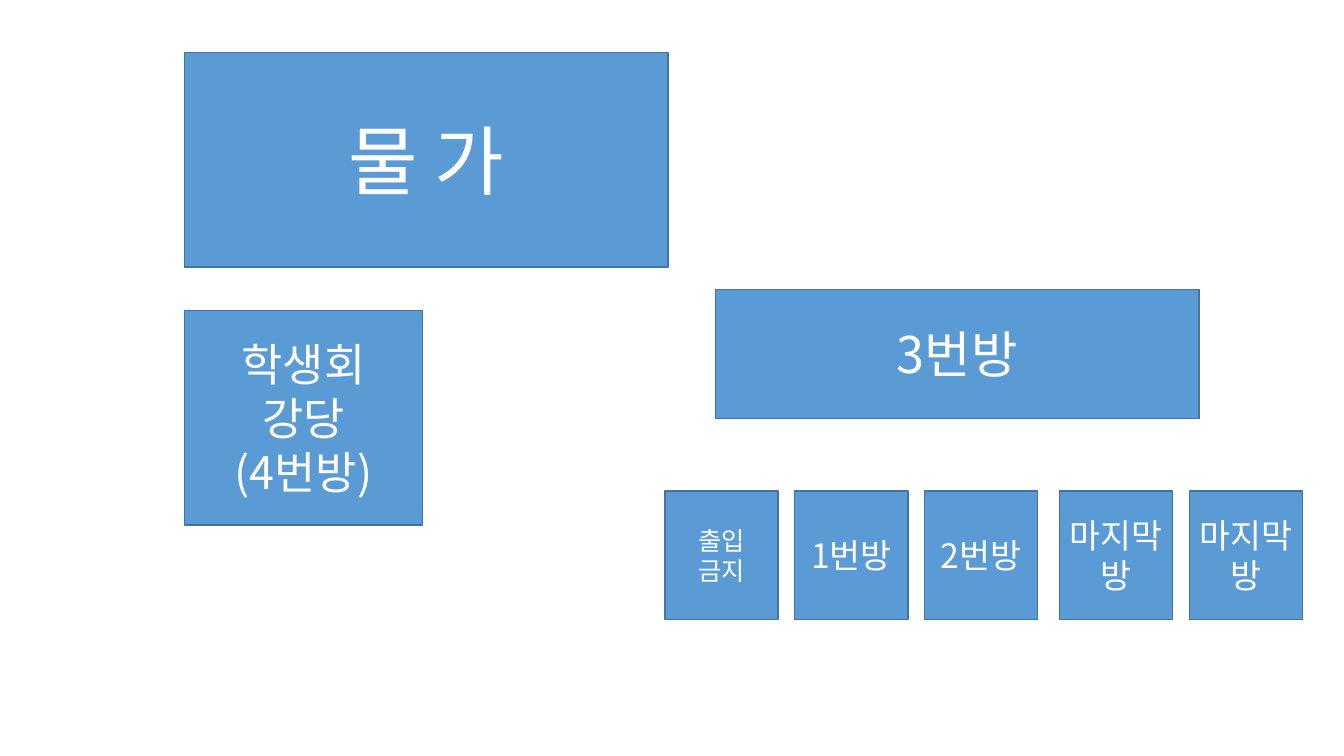
from lxml.etree import SubElement
from pptx import Presentation
from pptx.dml.color import RGBColor as RGB
from pptx.enum.shapes import MSO_SHAPE as Shape
from pptx.enum.text import MSO_ANCHOR as Anchor, PP_ALIGN as Align
from pptx.oxml.ns import qn
from pptx.util import Cm, Pt

COLORS = {"room": "5B9BD5", "edge": "43739E", "text": "FFFFFF"}
FONT = "Noto Sans CJK KR"


def add_room(slide, box, label, size):
    """Draw one labelled room in a box of left, top, width and height in cm."""
    room = slide.shapes.add_shape(Shape.RECTANGLE, *map(Cm, box))
    room.shadow.inherit = False
    room.fill.solid()
    room.fill.fore_color.rgb = RGB.from_string(COLORS["room"])
    room.line.color.rgb = RGB.from_string(COLORS["edge"])
    room.line.width = Pt(1)
    frame = room.text_frame
    frame.word_wrap = True
    frame.vertical_anchor = Anchor.MIDDLE
    frame.text = label
    for para in frame.paragraphs:
        para.alignment = Align.CENTER
        for run in para.runs:
            run.font.size = Pt(size)
            run.font.name = FONT
            run.font.color.rgb = RGB.from_string(COLORS["text"])
            SubElement(run.font._element, qn("a:ea"), typeface=FONT)


def add_row(slide, box, gap, rooms):
    """Fill a box with equal rooms from left to right, a gap apart."""
    left, top, width, height = box
    each = (width - gap * (len(rooms) - 1)) / len(rooms)
    for i, (label, size) in enumerate(rooms):
        add_room(slide, (left + i * (each + gap), top, each, height), label, size)


def add_west(slide, box):
    """Place the waterside above the student hall."""
    left, top, width, height = box
    tall = 5.41
    add_room(slide, (left, top, width, tall), "물 가", 54)
    add_room(slide, (left, top + height - tall, 6, tall), "학생회\n강당\n(4번방)", 32)


def add_east(slide, box):
    """Place room 3 above a row of three small rooms and a row of two."""
    left, top, width, height = box
    tall, small, gap = 3.25, 2.85, 0.42
    add_room(slide, (left + 1.27, top, 12.19, tall), "3번방", 36)
    low = top + height - tall
    trio = [("출입\n금지", 18), ("1번방", 24), ("2번방", 24)]
    add_row(slide, (left, low, 3 * small + 2 * gap, tall), gap, trio)
    wide = 2 * small + gap
    pair = [("마지막방", 24)] * 2
    add_row(slide, (left + width - wide, low, wide, tall), gap, pair)


def main():
    """Build the floor plan and save it."""
    deck = Presentation()
    deck.slide_width, deck.slide_height = Cm(33.87), Cm(19.05)
    slide = deck.slides.add_slide(deck.slide_layouts[6])
    add_west(slide, (4.65, 1.32, 12.19, 11.91))
    add_east(slide, (16.76, 7.29, 16.06, 8.33))
    deck.save("out.pptx")


if __name__ == "__main__":
    main()
